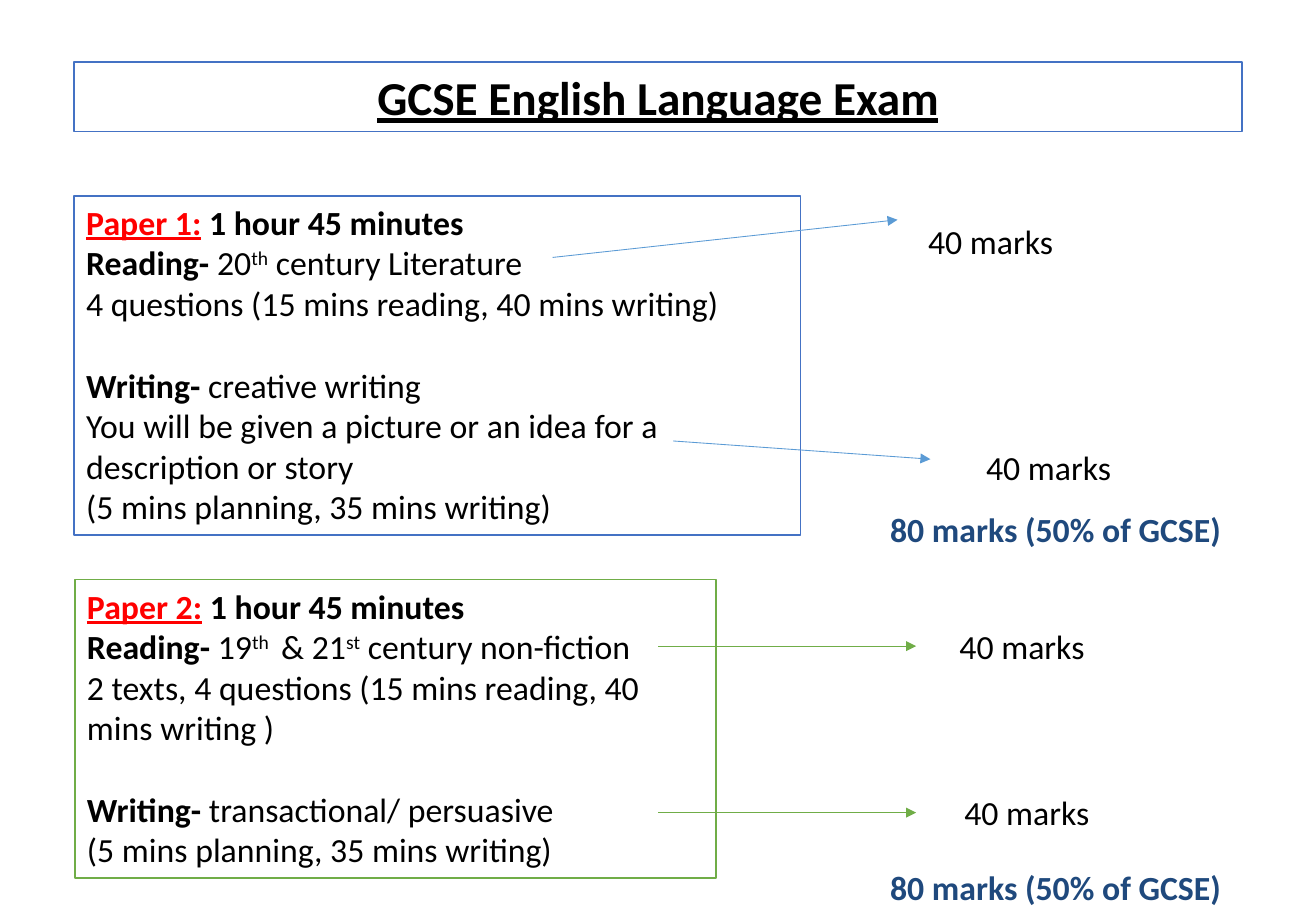
from lxml import etree
from pptx import Presentation
from pptx.dml.color import RGBColor
from pptx.enum import shapes, text
from pptx.oxml import ns
from pptx.util import Pt

COLORS = {"white": "FFFFFF", "black": "000000", "red": "FF0000",
          "blue": "4472C4", "sky": "5B9BD5", "green": "70AD47", "navy": "1F497D"}

STYLES = {
    "title": {"size": Pt(28), "bold": True, "underline": True},
    "paper": {"bold": True, "underline": True, "color": "red"},
    "bold": {"bold": True},
    "plain": {},
    "super": {"baseline": 30000},
    "total": {"bold": True, "color": "navy"},
}

TIME = ("1 hour 45 minutes", "bold")
READING = ("Reading-", "bold")
WRITING = ("Writing-", "bold")
WRITING_TIME = [("(5 mins planning, 35 mins writing)", "plain")]

PAPER_1 = [
    [("Paper 1:", "paper"), (" ", "plain"), TIME],
    [READING, (" 20", "plain"), ("th", "super"), (" century Literature", "plain")],
    [("4 questions (15 mins reading, 40 mins writing)", "plain")],
    [WRITING, (" creative writing", "plain")],
    [("You will be given a picture or an idea for a description or story", "plain")],
    WRITING_TIME,
]
PAPER_2 = [
    [("Paper 2:", "paper"), (" ", "plain"), TIME],
    [READING, (" 19", "plain"), ("th ", "super"), (" & 21", "plain"),
     ("st", "super"), (" century non-fiction", "plain")],
    [("2 texts, 4 questions (15 mins reading, 40 mins writing )", "plain")],
    [WRITING, (" transactional/ persuasive", "plain")],
    WRITING_TIME,
]


def rgb(name):
    return RGBColor.from_string(COLORS[name])


def add_run(p, words, style):
    r = p.add_run()
    r.text = words
    formats = {"name": "Calibri", "size": Pt(20), "bold": False, "underline": False}
    formats.update(STYLES[style])
    r.font.color.rgb = rgb(formats.pop("color", "black"))
    baseline = formats.pop("baseline", None)
    for key, value in formats.items():
        setattr(r.font, key, value)
    if baseline:
        r._r.get_or_add_rPr().set("baseline", str(baseline))


def outline(sp, color):
    sp.fill.solid()
    sp.fill.fore_color.rgb = rgb("white")
    sp.line.color.rgb = rgb(color)
    sp.line.width = Pt(1)


def add_title(s, words, box):
    sp = s.shapes.title
    for key, value in zip(("left", "top", "width", "height"), box):
        setattr(sp, key, Pt(value))
    outline(sp, "blue")
    p = sp.text_frame.paragraphs[0]
    p.alignment = text.PP_ALIGN.CENTER
    add_run(p, words, "title")


def add_paper(s, box, color, lines):
    sp = s.shapes.add_shape(shapes.MSO_SHAPE.RECTANGLE, *map(Pt, box))
    sp.shadow.inherit = False
    outline(sp, color)
    tf = sp.text_frame
    tf.word_wrap = True
    tf.vertical_anchor = text.MSO_ANCHOR.TOP
    for i, line in enumerate(lines):
        p = tf.add_paragraph() if i else tf.paragraphs[0]
        p.alignment = text.PP_ALIGN.LEFT
        if line[0] == WRITING:
            p.space_before = Pt(24.4)
        for words, style in line:
            add_run(p, words, style)


def add_label(s, words, style, left, top, width):
    tf = s.shapes.add_textbox(Pt(left), Pt(top), Pt(width), Pt(31.5)).text_frame
    tf.word_wrap = True
    add_run(tf.paragraphs[0], words, style)


def add_arrow(s, ends, color):
    sp = s.shapes.add_connector(shapes.MSO_CONNECTOR.STRAIGHT, *map(Pt, ends))
    sp.line.color.rgb = rgb(color)
    sp.line.width = Pt(0.5)
    etree.SubElement(sp.line._get_or_add_ln(), ns.qn("a:tailEnd"), type="triangle")
    etree.SubElement(sp._element.spPr, ns.qn("a:effectLst"))


def main():
    prs = Presentation()
    prs.slide_width, prs.slide_height = Pt(780), Pt(540)
    s = prs.slides.add_slide(prs.slide_layouts[5])

    add_title(s, "GCSE English Language Exam", (44, 36.8, 692, 41.2))
    add_paper(s, (44, 116, 430.5, 201), "blue", PAPER_1)
    add_paper(s, (44.5, 343.5, 380, 177), "green", PAPER_2)

    for ends, color in [((327.6, 152.6, 532, 130.3), "sky"),
                        ((399, 261.4, 551.5, 272.2), "sky"),
                        ((390.2, 383, 543, 383), "green"),
                        ((390.2, 481.7, 543, 481.7), "green")]:
        add_arrow(s, ends, color)

    for left, top in [(543, 127.5), (577.4, 261.4), (561.6, 367.2), (564.5, 465.8)]:
        add_label(s, "40 marks", "plain", left, top, 193)
    for top in (298, 510.5):
        add_label(s, "80 marks (50% of GCSE)", "total", 520.5, top, 215.3)

    prs.save("out.pptx")


if __name__ == "__main__":
    main()
